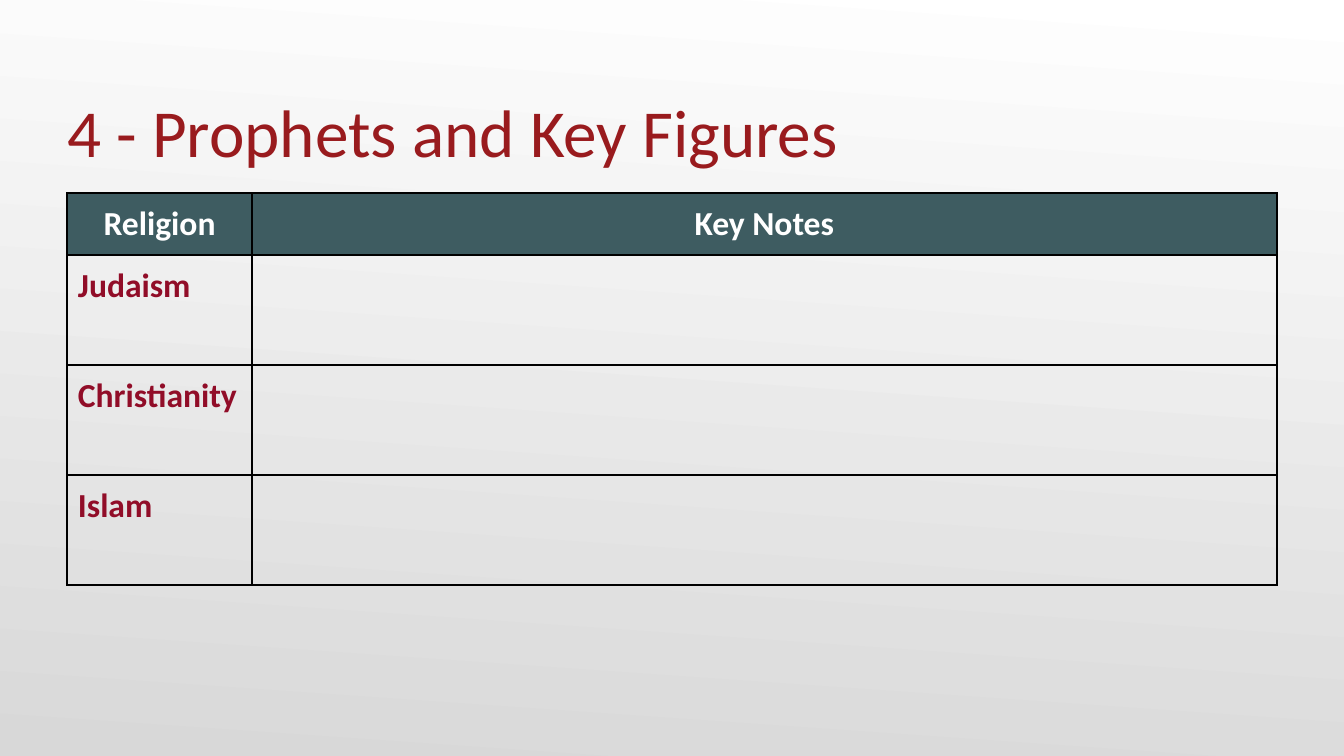
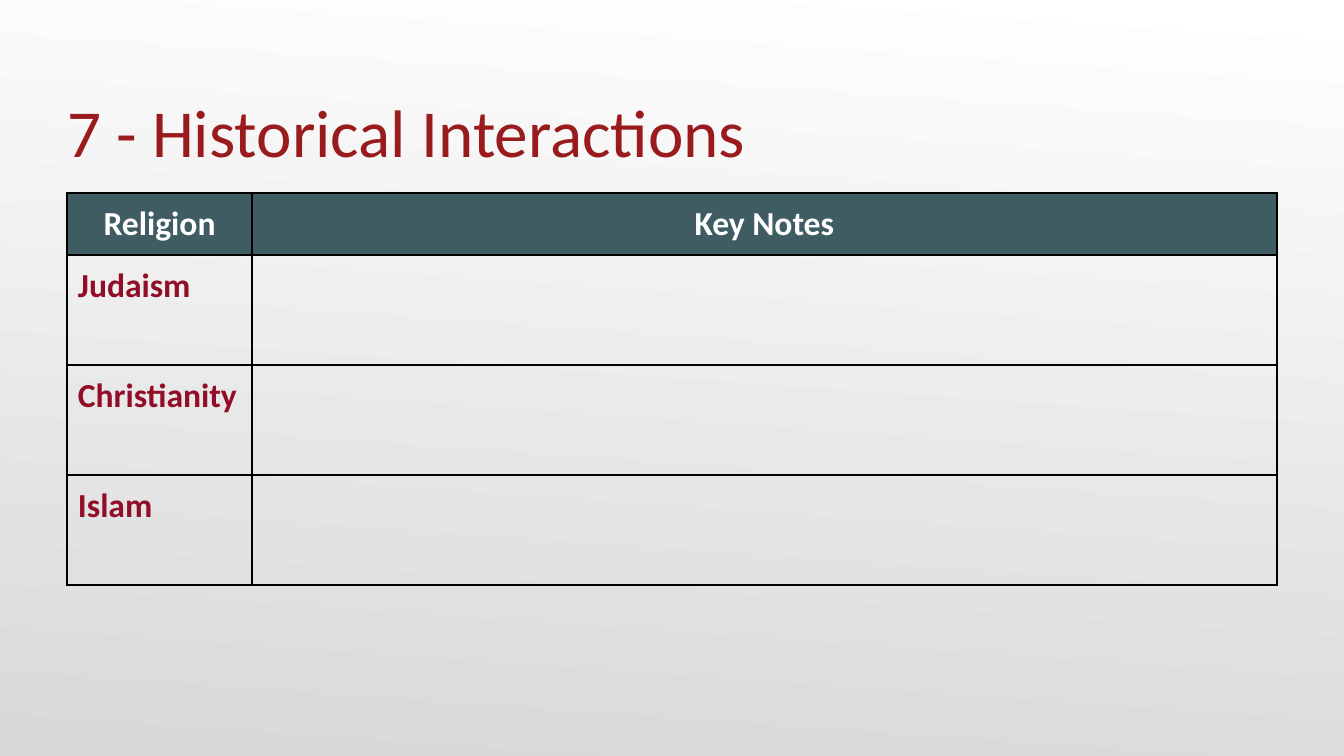
"""Build two note-taking slides that compare three religions."""
from lxml import etree
from pptx import Presentation
from pptx import util as u
from pptx.dml import color
from pptx.enum import text
from pptx.oxml import ns

PX = 4572
FONT = "Calibri"
RED, CRIMSON, TEAL = "991B1E", "910D28", "3E5C61"
WHITE, GREY, BLACK = "FFFFFF", "D8D8D8", "000000"
TITLES = ["4 - Prophets and Key Figures", "7 - Historical Interactions"]
HEADERS = ["Religion", "Key Notes"]
RELIGIONS = ["Judaism", "Christianity", "Islam"]


def px(n):
    return u.Emu(n * PX)


def rgb(value):
    return color.RGBColor.from_string(value)


class Deck:
    def __init__(self, width, height):
        self.prs = Presentation()
        self.prs.slide_width, self.prs.slide_height = px(width), px(height)
        self.s = None

    def slide(self):
        self.s = self.prs.slides.add_slide(self.prs.slide_layouts[6])
        fill = self.s.background.fill
        fill.gradient()
        fill.gradient_angle = 360 - 94
        for stop, value in zip(fill.gradient_stops, (WHITE, GREY)):
            stop.color.rgb = rgb(value)

    def run(self, p, words, size, value, bold=False):
        r = p.add_run()
        r.text = words
        r.font.name, r.font.size, r.font.bold = FONT, u.Pt(size), bold
        r.font.color.rgb = rgb(value)

    def title(self, words):
        tf = self.s.shapes.add_textbox(px(100), px(68), px(1800), px(187)).text_frame
        tf.word_wrap = True
        tf.vertical_anchor = text.MSO_ANCHOR.BOTTOM
        tf.margin_left = tf.margin_right = tf.margin_bottom = 0
        tf.margin_top = px(10)
        self.run(tf.paragraphs[0], words, 36, RED)

    def borders(self, cell):
        tc_pr = cell._tc.get_or_add_tcPr()
        for side in "LRTB":
            ln = etree.SubElement(tc_pr, ns.qn(f"a:ln{side}"), w=str(u.Pt(1)))
            fill = etree.SubElement(ln, ns.qn("a:solidFill"))
            etree.SubElement(fill, ns.qn("a:srgbClr"), val=BLACK)

    def cell(self, cell, words, header):
        cell.margin_left = cell.margin_right = px(16)
        cell.margin_top = cell.margin_bottom = px(16)
        self.borders(cell)
        if header:
            cell.fill.solid()
            cell.fill.fore_color.rgb = rgb(TEAL)
        else:
            cell.fill.background()
        if words:
            p = cell.text_frame.paragraphs[0]
            p.alignment = text.PP_ALIGN.CENTER if header else text.PP_ALIGN.LEFT
            self.run(p, words, 18, WHITE if header else CRIMSON, True)

    def table(self, rows, left, top, widths, heights):
        frame = self.s.shapes.add_table(len(rows), len(widths), px(left), px(top),
                                        px(sum(widths)), px(sum(heights)))
        table = frame.table
        table.first_row = table.horz_banding = False
        for column, width in zip(table.columns, widths):
            column.width = px(width)
        for i, (row, height) in enumerate(zip(rows, heights)):
            table.rows[i].height = px(height)
            for j, words in enumerate(row):
                self.cell(table.cell(i, j), words, header=i == 0)


def main():
    deck = Deck(2000, 1125)
    rows = [HEADERS] + [[name, ""] for name in RELIGIONS]
    heights = [88] + [164] * len(RELIGIONS)
    for words in TITLES:
        deck.slide()
        deck.title(words)
        deck.table(rows, 100, 287, [275, 1525], heights)
    deck.prs.save("out.pptx")


if __name__ == "__main__":
    main()
